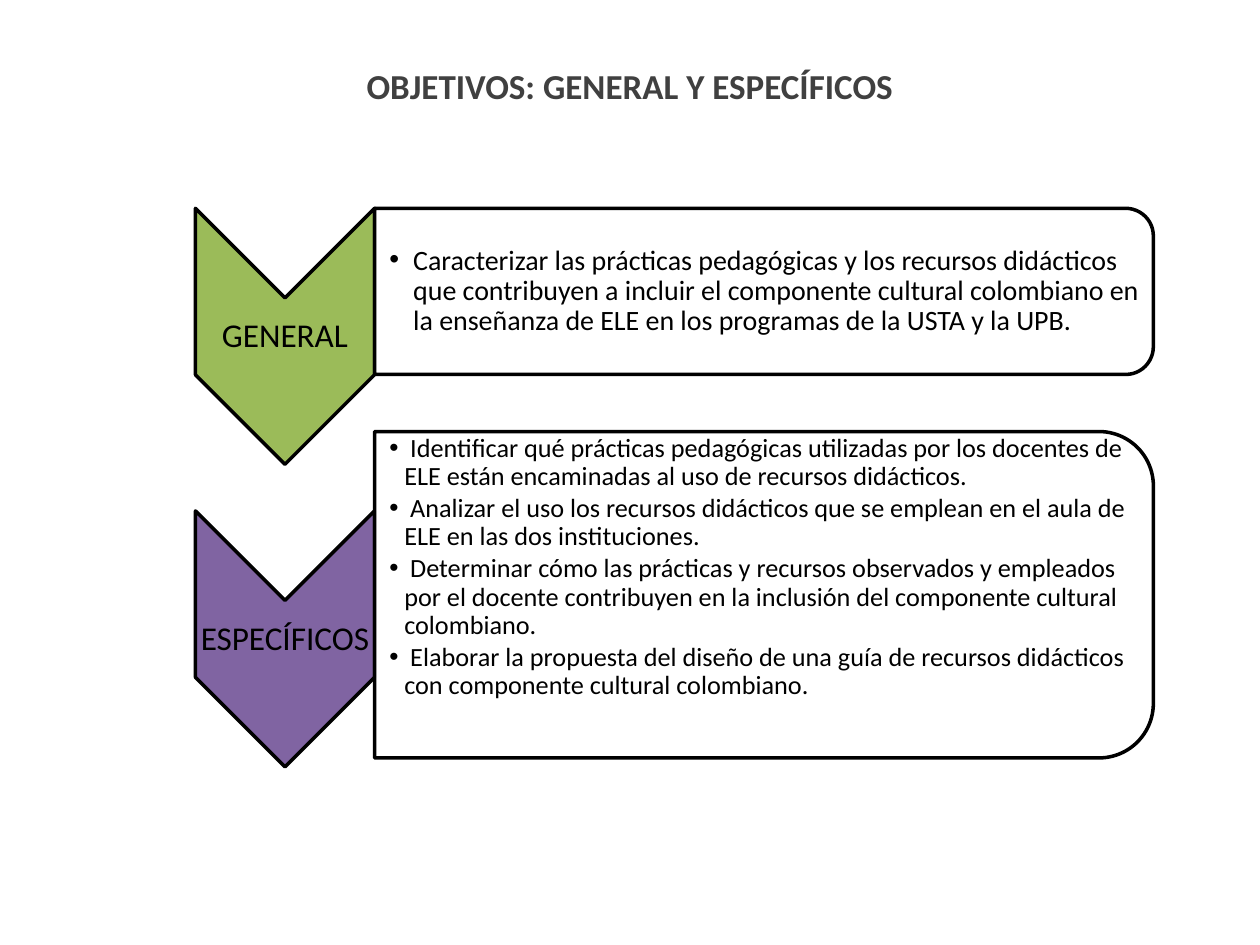
from lxml.etree import SubElement
from pptx import Presentation
from pptx.dml.color import RGBColor
from pptx.enum.shapes import MSO_SHAPE
from pptx.enum.text import MSO_ANCHOR, MSO_AUTO_SIZE, PP_ALIGN
from pptx.oxml.ns import qn
from pptx.util import Cm, Pt

# Content
TITLE = "OBJETIVOS: GENERAL Y ESPECÍFICOS"
# Each goal: card top and height, text inset from the card top, text height (cm)
GOALS = [
    {"name": "GENERAL", "fill": "green", "size": 16, "indent": 0.48,
     "card": (4.2, 3.35), "text": (0.16, 3.02), "width": 15.54,
     "items": [
         "Caracterizar las prácticas pedagógicas y los recursos didácticos que "
         "contribuyen a incluir el componente cultural colombiano en la "
         "enseñanza de ELE en los programas de la USTA y la UPB."]},
    {"name": "ESPECÍFICOS", "fill": "purple", "size": 15, "indent": 0.3,
     "card": (8.7, 6.58), "text": (0.32, 4.84), "width": 15.39,
     "items": [
         " Identificar qué prácticas pedagógicas utilizadas por los docentes de "
         "ELE están encaminadas al uso de recursos didácticos.",
         " Analizar el uso los recursos didácticos que se emplean en el aula de "
         "ELE en las dos instituciones.",
         " Determinar cómo las prácticas y recursos observados y empleados por "
         "el docente contribuyen en la inclusión del componente cultural "
         "colombiano.",
         " Elaborar la propuesta del diseño de una guía de recursos didácticos "
         "con componente cultural colombiano."]},
]
COLORS = {"green": "9BBB59", "purple": "8064A2", "white": "FFFFFF",
          "black": "000000", "gray": "404040"}
FONT = "Calibri"

# Layout (cm)
LEFT, TOP, STEP = 3.94, 4.2, 6.1
ARROW_W, ARROW_H = 3.61, 5.16
CARD_X, CARD_W = LEFT + ARROW_W, 15.7
LABEL_Y, LABEL_H = 1.82, 1.55


def color(name):
    return RGBColor.from_string(COLORS[name])


def place(shape, x, y, w, h):
    shape.left, shape.top, shape.width, shape.height = map(Cm, (x, y, w, h))


def write(shape, lines, size, fill="black", bold=False, align=PP_ALIGN.CENTER,
          inset=0.03, spacing=0.9, after=0, indent=None):
    frame = shape.text_frame
    frame.word_wrap = True
    frame.auto_size = MSO_AUTO_SIZE.NONE
    frame.vertical_anchor = MSO_ANCHOR.MIDDLE
    frame.margin_left = Cm(inset)
    frame.margin_top = frame.margin_right = frame.margin_bottom = Cm(0.03)
    for i, line in enumerate(lines):
        para = frame.add_paragraph() if i else frame.paragraphs[0]
        if indent:
            props = para._p.get_or_add_pPr()
            props.set("marL", str(Cm(indent)))
            props.set("indent", str(-Cm(indent)))
            SubElement(props, qn("a:buChar"), char="•")
        para.alignment = align
        para.line_spacing = spacing
        para.space_before, para.space_after = Pt(0), Pt(after)
        run = para.add_run()
        run.text = line
        font = run.font
        font.name, font.size, font.bold = FONT, Pt(size), bold
        font.color.rgb = color(fill)


def turned(kind, x, y, w, h, fill):
    """Add an outlined shape turned by 90 degrees that covers the given box."""
    shape = slide.shapes.add_shape(kind, 0, 0, 0, 0)
    place(shape, x + (w - h) / 2, y + (h - w) / 2, h, w)
    shape.rotation = 90
    shape.shadow.inherit = False
    shape.fill.solid()
    shape.fill.fore_color.rgb = color(fill)
    shape.line.color.rgb = color("black")
    shape.line.width = Pt(2)
    return shape


deck = Presentation()
deck.slide_width, deck.slide_height = Cm(25.4), Cm(19.05)
slide = deck.slides.add_slide(deck.slide_layouts[3])
title, *bodies = slide.placeholders

# Title
place(title, 1.27, 0.76, 22.86, 1.93)
write(title, [TITLE], 20, fill="gray", bold=True, spacing=1)

# One arrow, label and card for each kind of goal
for row, (goal, body) in enumerate(zip(GOALS, bodies)):
    y = TOP + row * STEP
    arrow = turned(MSO_SHAPE.CHEVRON, LEFT, y, ARROW_W, ARROW_H, goal["fill"])
    arrow.adjustments[0] = 0.5

    label = slide.shapes.add_textbox(0, 0, 0, 0)
    place(label, LEFT, y + LABEL_Y, ARROW_W, LABEL_H)
    write(label, [goal["name"]], 19)

    top, high = goal["card"]
    card = turned(MSO_SHAPE.ROUND_2_SAME_RECTANGLE, CARD_X, top, CARD_W, high,
                  "white")
    tint = card.fill._xPr.find(qn("a:solidFill"))[0]
    SubElement(tint, qn("a:alpha"), val="90000")

    # The list lies in front of its card
    gap, tall = goal["text"]
    place(body, CARD_X, top + gap, goal["width"], tall)
    write(body, goal["items"], goal["size"], align=PP_ALIGN.LEFT, inset=0.3,
          after=2, indent=goal["indent"])
    slide.shapes._spTree.append(body._element)

deck.save("out.pptx")
